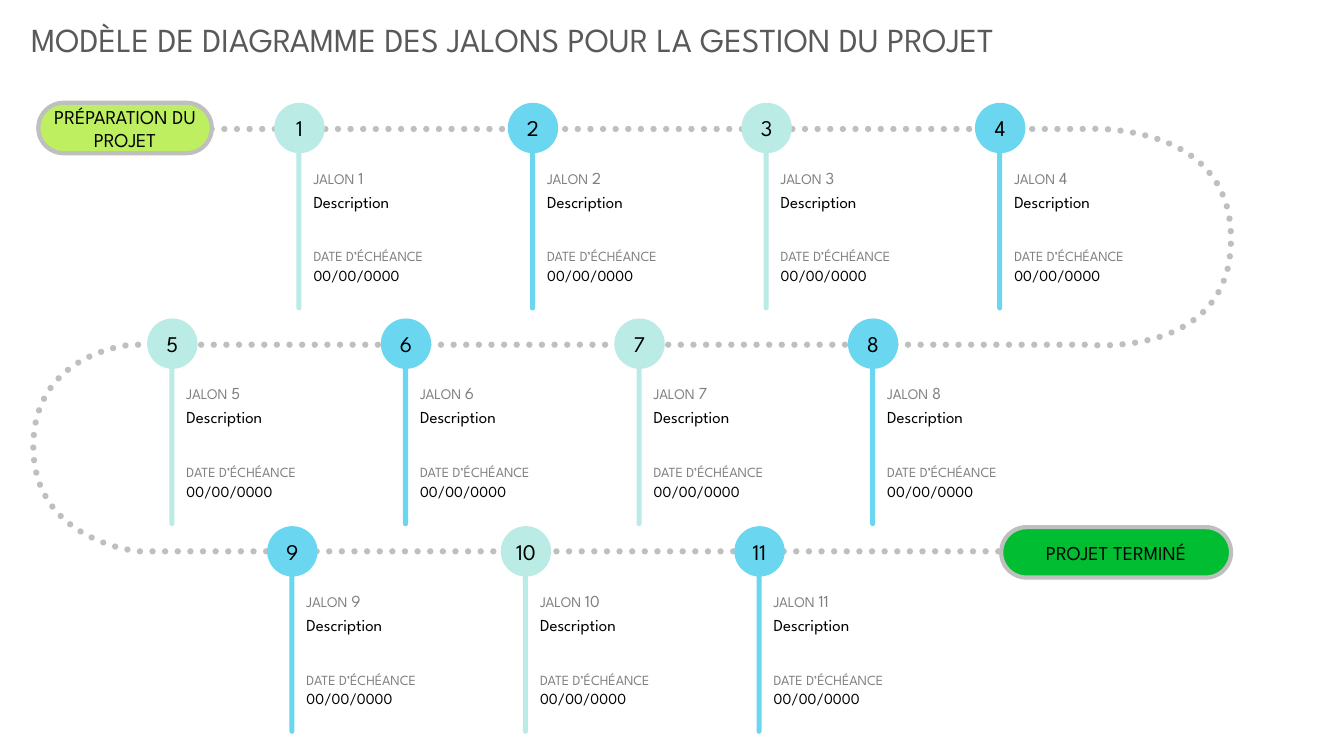
from lxml import etree
from pptx import Presentation
from pptx.dml.color import RGBColor
from pptx.enum.dml import MSO_LINE
from pptx.enum.shapes import MSO_SHAPE
from pptx.enum.text import MSO_ANCHOR, PP_ALIGN
from pptx.util import Inches, Pt

FONT = "League Spartan"
BLACK = RGBColor(0x00, 0x00, 0x00)
TITLE_GRAY = RGBColor(0x59, 0x59, 0x59)
LABEL_GRAY = RGBColor(0x80, 0x80, 0x80)
PATH_GRAY = RGBColor(0xBF, 0xBF, 0xBF)
MINT = RGBColor(0xBB, 0xEB, 0xE5)
BLUE = RGBColor(0x6B, 0xD6, 0xF0)
LIME = RGBColor(0xBE, 0xEF, 0x60)
GREEN = RGBColor(0x00, 0xBD, 0x32)

PITCH = 6.95 / 3
CURVE_STEPS = 32
ROWS = [
    (2.72, 1.02, range(1, 5), (MINT, BLUE)),
    (1.46, 3.16, range(5, 9), (MINT, BLUE)),
    (2.65, 5.22, range(9, 12), (BLUE, MINT)),
]


def write(sp, runs, color, align=PP_ALIGN.LEFT):
    tf = sp.text_frame
    tf.word_wrap = True
    p = tf.paragraphs[0]
    p.alignment = align
    for text, size in runs:
        r = p.add_run()
        r.text = text
        r.font.name = FONT
        r.font.size = Pt(size)
        r.font.color.rgb = color


def no_insets(tf):
    tf.margin_left = tf.margin_right = tf.margin_top = tf.margin_bottom = 0


def add_text(shapes, box, runs, color):
    sp = shapes.add_textbox(*map(Inches, box))
    no_insets(sp.text_frame)
    write(sp, runs, color)
    return sp


def add_solid(shapes, kind, box, fill):
    sp = shapes.add_shape(kind, *map(Inches, box))
    sp.shadow.inherit = False
    sp.fill.solid()
    sp.fill.fore_color.rgb = fill
    sp.line.fill.background()
    if kind == MSO_SHAPE.ROUNDED_RECTANGLE:
        sp.adjustments[0] = 0.5
    return sp


def write_centred(sp, text, size):
    no_insets(sp.text_frame)
    sp.text_frame.vertical_anchor = MSO_ANCHOR.MIDDLE
    write(sp, [(text, size)], BLACK, PP_ALIGN.CENTER)


def add_title(s, box, text):
    sp = s.shapes.add_textbox(*map(Inches, box))
    write(sp, [(text, 24)], TITLE_GRAY)


def curve(p0, p1, p2, p3):
    points = []
    for step in range(1, CURVE_STEPS + 1):
        t = step / CURVE_STEPS
        u = 1 - t
        weights = (u ** 3, 3 * u * u * t, 3 * u * t * t, t ** 3)
        points.append(tuple(
            sum(w * c for w, c in zip(weights, axis))
            for axis in zip(p0, p1, p2, p3)))
    return points


def add_path(s, box):
    left, top, width, height = box
    right, bottom = left + width, top + height
    middle = top + 2.14
    upper_turn, lower_turn = (right, top + 1.09), (left, top + 3.15)
    upper_in, upper_out = (right - 1.48, top), (right - 1.43, middle)
    lower_in, lower_out = (left + 0.98, middle), (left + 1.04, bottom)
    points = [
        upper_in,
        *curve(upper_in, upper_in, (right, top - 0.11), upper_turn),
        *curve(upper_turn, (right, top + 2.29), upper_out, upper_out),
        lower_in,
        *curve(lower_in, lower_in, (left, top + 2.21), lower_turn),
        *curve(lower_turn, (left, top + 4.09), lower_out, lower_out),
        (right - 1.93, bottom),
    ]
    fb = s.shapes.build_freeform(Inches(left + 1.77), Inches(top))
    fb.add_line_segments([(Inches(x), Inches(y)) for x, y in points], close=False)
    sp = fb.convert_to_shape()
    sp.shadow.inherit = False
    sp.fill.background()
    sp.line.color.rgb = PATH_GRAY
    sp.line.width = Pt(4.5)
    sp.line.dash_style = MSO_LINE.ROUND_DOT
    ln = sp.line.fill._xPr
    ln.set("cap", "rnd")
    etree.SubElement(ln, ln.tag.replace("}ln", "}round"))


def add_terminal(s, box, text, fill):
    sp = add_solid(s.shapes, MSO_SHAPE.ROUNDED_RECTANGLE, box, fill)
    sp.line.color.rgb = PATH_GRAY
    sp.line.width = Pt(3)
    write_centred(sp, text, 14)


def add_milestone(s, left, top, number, color):
    shapes = s.shapes.add_group_shape().shapes
    add_solid(shapes, MSO_SHAPE.ROUNDED_RECTANGLE,
              (left + 0.22, top + 0.19, 0.05, 1.87), color)
    x = left + 0.39
    add_text(shapes, (x, top + 0.64, 1.17, 0.26),
             [("JALON", 10.5), (" ", 11), (str(number), 12)], LABEL_GRAY)
    add_text(shapes, (x, top + 0.88, 1.37, 0.57), [("Description", 12)], BLACK)
    due = add_text(shapes, (x, top + 1.44, 1.5, 0.21),
                   [("DATE D’ÉCHÉANCE", 10)], LABEL_GRAY)
    due.text_frame.paragraphs[0].space_after = Pt(3)
    add_text(shapes, (x, top + 1.62, 0.9, 0.26), [("00/00/0000", 11)], BLACK)
    marker = add_solid(shapes, MSO_SHAPE.OVAL, (left, top, 0.5, 0.5), color)
    write_centred(marker, str(number), 16)


def add_row(s, left, top, numbers, colors):
    for i, number in enumerate(numbers):
        add_milestone(s, left + i * PITCH, top, number, colors[i % 2])


def main():
    prs = Presentation()
    prs.slide_width = Inches(13.33)
    prs.slide_height = Inches(7.5)
    s = prs.slides.add_slide(prs.slide_layouts[6])
    add_title(s, (0.21, 0.14, 12.64, 0.5),
              "MODÈLE DE DIAGRAMME DES JALONS POUR LA GESTION DU PROJET")
    add_path(s, (0.33, 1.28, 11.88, 4.19))
    add_terminal(s, (0.38, 1.02, 1.72, 0.5), "PRÉPARATION DU PROJET", LIME)
    for row in ROWS:
        add_row(s, *row)
    add_terminal(s, (9.93, 5.23, 2.28, 0.5), "PROJET TERMINÉ", GREEN)
    prs.save("out.pptx")


if __name__ == "__main__":
    main()
